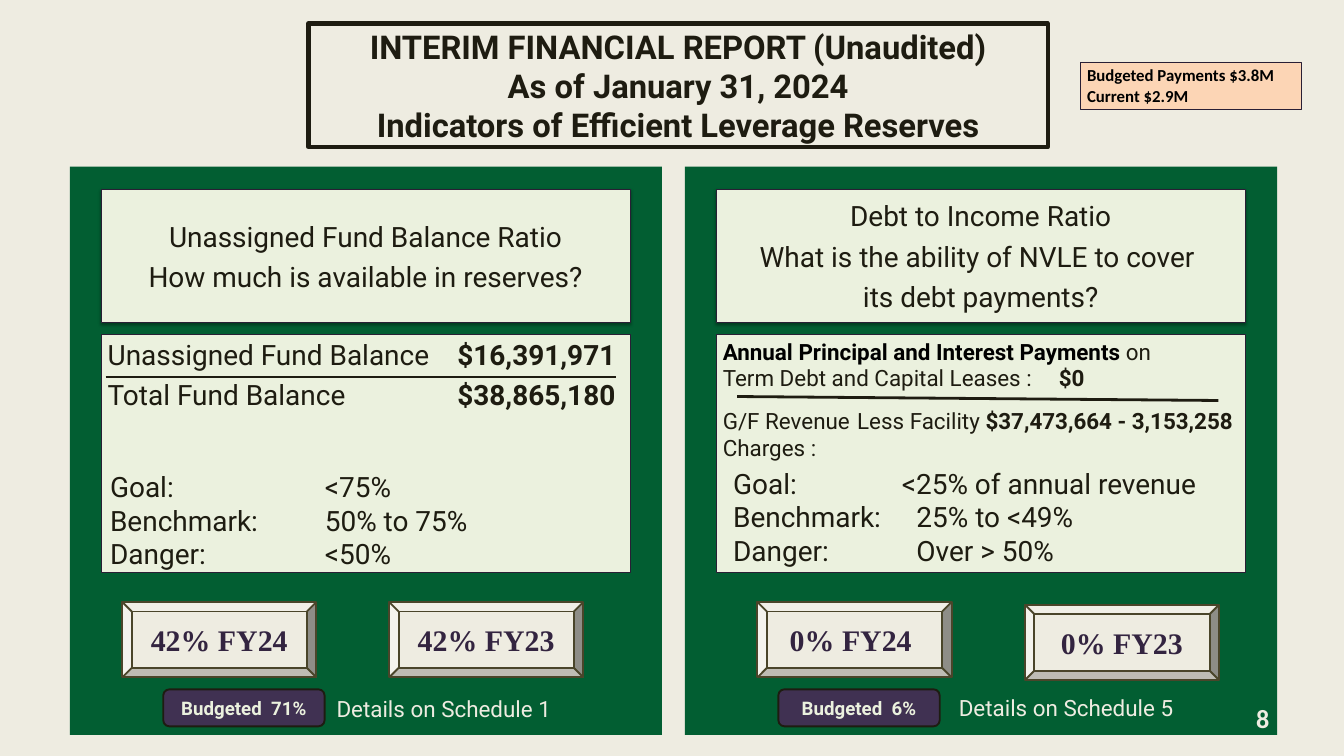
from lxml.etree import SubElement as Sub
from pptx import Presentation
from pptx.dml.color import RGBColor as Rgb
from pptx.enum.shapes import MSO_CONNECTOR as Conn, MSO_SHAPE as Kind
from pptx.enum.text import MSO_ANCHOR as Anchor, PP_ALIGN as Align
from pptx.oxml.ns import qn
from pptx.util import Cm, Pt

DARK, CREAM, MINT, EDGE = "1E1C11", "EEECE1", "EBF1DE", "291F35"
STEP = 23.25
TITLE = ["INTERIM FINANCIAL REPORT (Unaudited)", "As of January 31, 2024",
         "Indicators of Efficient Leverage Reserves"]
NOTE = ["Budgeted Payments $3.8M", "Current $2.9M"]
SIDES = [
    {
        "ask": ["Unassigned Fund Balance Ratio", "How much is available in reserves?"],
        "sums": [
            [("Unassigned Fund Balance\t", False), ("$16,391,971", True)],
            [("Total Fund Balance\t", False), ("$38,865,180", True)],
        ],
        "size": 30, "gaps": [0, 7], "stops": [(19.2, "r")],
        "rule": (3.99, 14.25, 23.27, 14.25),
        "goals": ["Goal:\t<75%", "Benchmark:\t50% to 75%", "Danger:\t<50%"],
        "spot": (3.91, 17.63, 20, 4.11), "cols": [8.12, 8.12, 8.12],
        "rates": [("42% FY24", 4.62, 22.76), ("42% FY23", 14.71, 22.76)],
        "plan": "Budgeted  71%",
        "more": ("Details on Schedule 1", 12.47, 26.16),
    },
    {
        "ask": ["Debt to Income Ratio", "What is the ability of NVLE to cover ",
                "its debt payments?"],
        "sums": [
            [("Annual Principal and Interest Payments ", True, "000000"), ("on", False)],
            [("Term Debt and Capital Leases :\t", False), ("$0", True)],
            [("G/F Revenue\tLess Facility ", False), ("$37,473,664 - 3,153,258", True)],
            [("Charges : ", False)],
        ],
        "size": 24, "gaps": [0, 0, 17, 0], "stops": [(5.08, "l"), (12.7, "l")],
        "rule": (27.86, 14.99, 46.05, 15.14),
        "goals": ["Goal:\t<25% of annual revenue", "Benchmark:\t25% to <49%",
                  "Danger:\tOver > 50%"],
        "spot": (27.46, 17.5, 19.05, 4.11), "cols": [6.38, 6.93, 6.93],
        "rates": [("0% FY24 ", 28.63, 22.76), ("0% FY23", 38.74, 22.86)],
        "plan": "Budgeted  6%",
        "more": ("Details on Schedule 5", 35.99, 26.11),
    },
]

deck = Presentation()
deck.slide_width, deck.slide_height = Cm(50.8), Cm(28.58)
slide = deck.slides.add_slide(deck.slide_layouts[6])


def tint(hue):
    return Rgb.from_string(hue)


def paint(fill, hue):
    fill.solid()
    fill.fore_color.rgb = tint(hue)


def box(kind, spot, fill=None, line=None, width=0.75):
    shape = slide.shapes.add_shape(kind, *map(Cm, spot))
    shape.shadow.inherit = False
    if fill:
        paint(shape.fill, fill)
    else:
        shape.fill.background()
    if line:
        shape.line.color.rgb = tint(line)
        shape.line.width = Pt(width)
    else:
        shape.line.fill.background()
    return shape


def label(spot):
    return slide.shapes.add_textbox(*map(Cm, spot))


def plain(lines, bold=False):
    return [[(text, bold)] for text in lines]


def write(shape, rows, size, hue=DARK, font="Roboto", align=Align.LEFT,
          anchor=Anchor.TOP, gaps=None, stops=None, flush=False):
    frame = shape.text_frame
    frame.word_wrap = True
    frame.vertical_anchor = anchor
    if flush:
        frame.margin_left = frame.margin_right = 0
        frame.margin_top = frame.margin_bottom = 0
    for i, row in enumerate(rows):
        para = frame.add_paragraph() if i else frame.paragraphs[0]
        para.alignment = align
        if gaps:
            para.space_before = Pt(gaps[i])
        if stops:
            tabs = Sub(para._p.get_or_add_pPr(), qn("a:tabLst"))
            for pos, side in stops[i]:
                Sub(tabs, qn("a:tab"), pos=str(int(Cm(pos))), algn=side)
        for text, bold, *own in row:
            run = para.add_run()
            run.text = text
            run.font.name, run.font.size, run.font.bold = font, Pt(size), bold
            run.font.color.rgb = tint(own[0] if own else hue)


def shade(shape):
    glow = Sub(shape._element.spPr.find(qn("a:effectLst")), qn("a:outerShdw"),
               blurRad=str(int(Pt(3.1))), dist=str(int(Pt(1.8))),
               dir="5400000", rotWithShape="0")
    Sub(Sub(glow, qn("a:srgbClr"), val="000000"), qn("a:alpha"), val="35000")


def rule(ends):
    line = slide.shapes.add_connector(Conn.STRAIGHT, *map(Cm, ends))
    line.line.color.rgb = tint(DARK)
    line.line.width = Pt(3)
    Sub(line._element.spPr, qn("a:effectLst"))


mid = {"align": Align.CENTER, "anchor": Anchor.MIDDLE}
paint(slide.background.fill, CREAM)
head = box(Kind.RECTANGLE, (11.66, 0.89, 27.94, 4.67), None, DARK, 4.5)
write(head, plain(TITLE, True), 35.1, flush=True, **mid)

for i, side in enumerate(SIDES):
    dx = i * STEP
    box(Kind.RECTANGLE, (2.64 + dx, 6.3, 22.38, 21.48), "025E32")
    card = box(Kind.RECTANGLE, (3.82 + dx, 7.15, 20, 5.05), MINT, EDGE)
    shade(card)
    asks = plain(side["ask"])
    write(card, asks, 30, gaps=[0] + [7] * (len(asks) - 1), **mid)
    card = box(Kind.RECTANGLE, (3.82 + dx, 12.64, 20, 9), MINT, EDGE)
    write(card, side["sums"], side["size"], gaps=side["gaps"],
          stops=[side["stops"]] * len(side["sums"]))
    for text, x, y in side["rates"]:
        key = box(Kind.BEVEL, (x, y, 7.34, 2.85), CREAM, "4A452A", 2)
        write(key, plain([text], True), 32, "332440", "Times New Roman", **mid)
    tag = box(Kind.ROUNDED_RECTANGLE, (6.17 + dx, 26.06, 6.1, 1.4), "403152", DARK, 2)
    write(tag, plain([side["plan"]], True), 20, MINT, **mid)
    text, x, y = side["more"]
    write(label((x, y, 9.5, 1.27)), plain([text]), 24, CREAM)
    rule(side["rule"])
    write(label(side["spot"]), plain(side["goals"]), 30,
          stops=[[(pos, "l")] for pos in side["cols"]])

write(label((46.91, 26.54, 1.07, 1.19)), plain("8", True), 28, CREAM, "Calibri",
      Align.RIGHT, flush=True)
note = box(Kind.RECTANGLE, (40.84, 2.34, 8.36, 1.8), "FCD5B5", EDGE)
write(note, plain(NOTE, True), 18, "000000", "Calibri")

deck.save("out.pptx")
